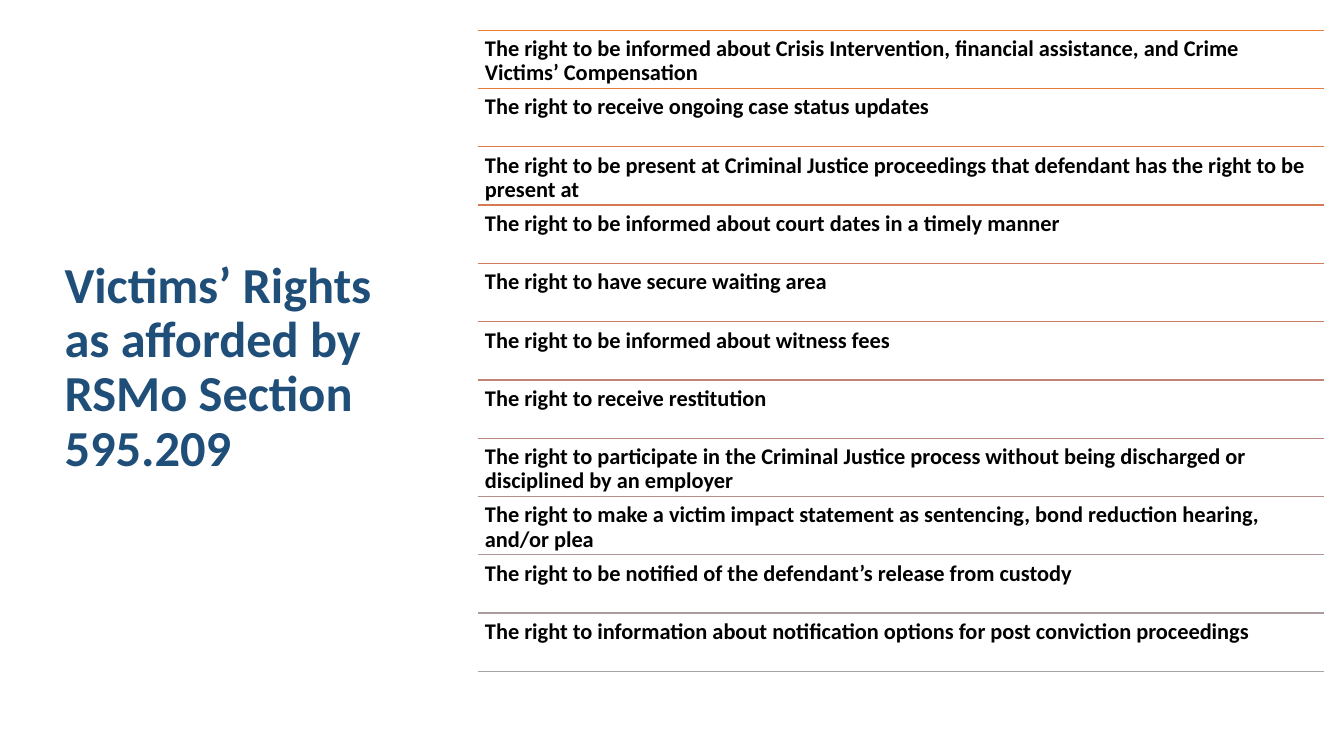
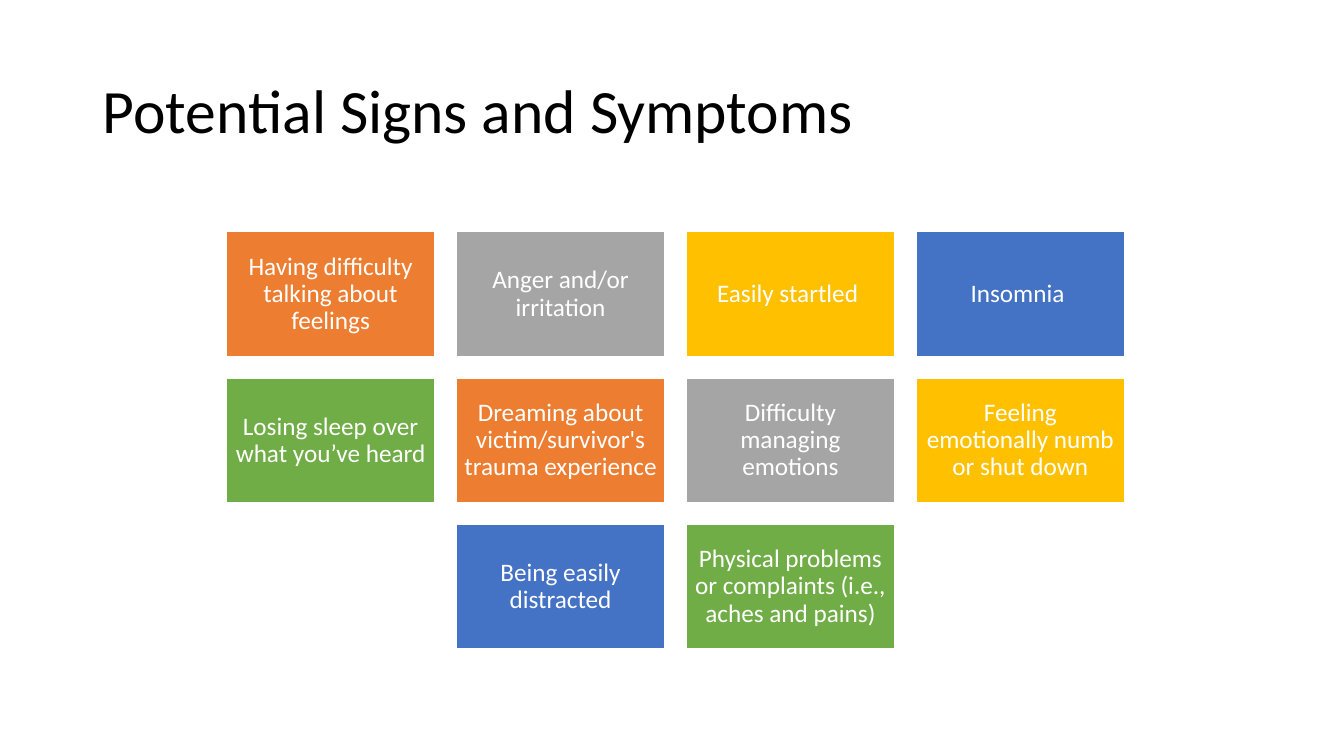
from lxml import etree
from pptx import Presentation
from pptx.dml.color import RGBColor
from pptx.enum.shapes import MSO_CONNECTOR, MSO_SHAPE
from pptx.enum.text import MSO_ANCHOR, MSO_AUTO_SIZE, PP_ALIGN
from pptx.oxml.ns import qn
from pptx.util import Inches, Pt

STRAIGHT, RECTANGLE = MSO_CONNECTOR.STRAIGHT, MSO_SHAPE.RECTANGLE
TOP, MIDDLE = MSO_ANCHOR.TOP, MSO_ANCHOR.MIDDLE
LEFT, CENTER = PP_ALIGN.LEFT, PP_ALIGN.CENTER
FIXED_SIZE = MSO_AUTO_SIZE.NONE

FONT = "Calibri"
BLACK, WHITE, NAVY = "000000", "FFFFFF", "1F4E79"
ORANGE, GRAY, GOLD, BLUE, GREEN = "ED7D31", "A5A5A5", "FFC000", "4472C4", "70AD47"
CARD_COLORS = [ORANGE, GRAY, GOLD, BLUE, GREEN]
INSET = 0.07

RIGHTS_TITLE = "Victims’ Rights as afforded by RSMo Section 595.209"
RIGHTS = [
    (ORANGE, "The right to be informed about Crisis Intervention, financial assistance, "
             "and Crime Victims’ Compensation"),
    ("E57B3D", "The right to receive ongoing case status updates"),
    ("DD7A49", "The right to be present at Criminal Justice proceedings that defendant "
               "has the right to be present at"),
    ("D67A54", "The right to be informed about court dates in a timely manner"),
    ("CF7C5F", "The right to have secure waiting area"),
    ("C87F6A", "The right to be informed about witness fees"),
    ("C18375", "The right to receive restitution"),
    ("BB887F", "The right to participate in the Criminal Justice process without being "
               "discharged or disciplined by an employer"),
    ("B58E89", "The right to make a victim impact statement as sentencing, "
               "bond reduction hearing, and/or plea"),
    ("AF9593", "The right to be notified of the defendant’s release from custody"),
    ("AA9C9C", "The right to information about notification options "
               "for post conviction proceedings"),
]
LIST_LEFT, LIST_TOP, LIST_WIDTH, LIST_BOTTOM = 4.74, 0.3, 8.39, 6.66

SYMPTOMS_TITLE = "Potential Signs and Symptoms"
SYMPTOMS = [
    "Having difficulty talking about feelings",
    "Anger and/or irritation",
    "Easily startled ",
    "Insomnia ",
    "Losing sleep over what you’ve heard",
    "Dreaming about victim/survivor's trauma experience",
    "Difficulty managing emotions",
    "Feeling emotionally numb or shut down",
    "Being easily distracted",
    "Physical problems or complaints (i.e., aches and pains)",
]
COLUMNS = 4
GRID_CENTER, GRID_TOP = 6.7, 2.3
CARD_WIDTH, CARD_HEIGHT, CARD_GAP = 2.07, 1.24, 0.21


def rgb(color):
    """Turn a hex string into a colour."""
    return RGBColor.from_string(color)


def write(shape, text, size, color, bold=False, align=LEFT, anchor=MIDDLE):
    """Fill a shape with one styled paragraph."""
    text_frame = shape.text_frame
    text_frame.text = text
    text_frame.word_wrap = True
    text_frame.auto_size = FIXED_SIZE
    text_frame.vertical_anchor = anchor
    paragraph = text_frame.paragraphs[0]
    paragraph.alignment = align
    paragraph.line_spacing = 0.9
    font = paragraph.runs[0].font
    font.name, font.size, font.bold = FONT, Pt(size), bold
    font.color.rgb = rgb(color)


def set_insets(shape):
    """Give a shape the same small inset on every side."""
    text_frame = shape.text_frame
    text_frame.margin_left = text_frame.margin_right = Inches(INSET)
    text_frame.margin_top = text_frame.margin_bottom = Inches(INSET)


def add_titled_slide(presentation, title, box, size, color, bold=False):
    """Add a title-only slide with its title placed and styled."""
    slide = presentation.slides.add_slide(presentation.slide_layouts[5])
    shape = slide.shapes.title
    shape.left, shape.top, shape.width, shape.height = map(Inches, box)
    write(shape, title, size, color, bold)
    return slide


def add_rule(slide, top, color):
    """Draw one horizontal rule across the list."""
    rule = slide.shapes.add_connector(
        STRAIGHT, Inches(LIST_LEFT), Inches(top), Inches(LIST_LEFT + LIST_WIDTH), Inches(top))
    rule.line.color.rgb = rgb(color)
    rule.line.width = Pt(1)
    etree.SubElement(rule._element.spPr, qn("a:effectLst"))


def add_rights_slide(presentation):
    """Build the ruled list of rights."""
    slide = add_titled_slide(
        presentation, RIGHTS_TITLE, (0.54, 0.5, 3.37, 6.31), 36, NAVY, bold=True)
    row_height = (LIST_BOTTOM - LIST_TOP) / len(RIGHTS)
    for index, (color, text) in enumerate(RIGHTS):
        top = LIST_TOP + index * row_height
        add_rule(slide, top, color)
        box = slide.shapes.add_textbox(
            Inches(LIST_LEFT), Inches(top), Inches(LIST_WIDTH), Inches(row_height))
        set_insets(box)
        write(box, text, 16, BLACK, bold=True, anchor=TOP)
    add_rule(slide, LIST_BOTTOM, GRAY)


def add_symptoms_slide(presentation):
    """Build the grid of symptom cards with each row centred."""
    slide = add_titled_slide(
        presentation, SYMPTOMS_TITLE, (0.92, 0.4, 11.5, 1.45), 44, BLACK)
    for index, text in enumerate(SYMPTOMS):
        row, column = divmod(index, COLUMNS)
        row_count = min(COLUMNS, len(SYMPTOMS) - row * COLUMNS)
        row_width = row_count * (CARD_WIDTH + CARD_GAP) - CARD_GAP
        left = GRID_CENTER - row_width / 2 + column * (CARD_WIDTH + CARD_GAP)
        top = GRID_TOP + row * (CARD_HEIGHT + CARD_GAP)
        card = slide.shapes.add_shape(
            RECTANGLE, Inches(left), Inches(top), Inches(CARD_WIDTH), Inches(CARD_HEIGHT))
        card.shadow.inherit = False
        card.fill.solid()
        card.fill.fore_color.rgb = rgb(CARD_COLORS[index % len(CARD_COLORS)])
        card.line.color.rgb = rgb(WHITE)
        card.line.width = Pt(1)
        set_insets(card)
        write(card, text, 18, WHITE, align=CENTER)


def main():
    """Build and save the presentation."""
    presentation = Presentation()
    presentation.slide_width, presentation.slide_height = Inches(13.33), Inches(7.5)
    add_rights_slide(presentation)
    add_symptoms_slide(presentation)
    presentation.save("out.pptx")


if __name__ == "__main__":
    main()
